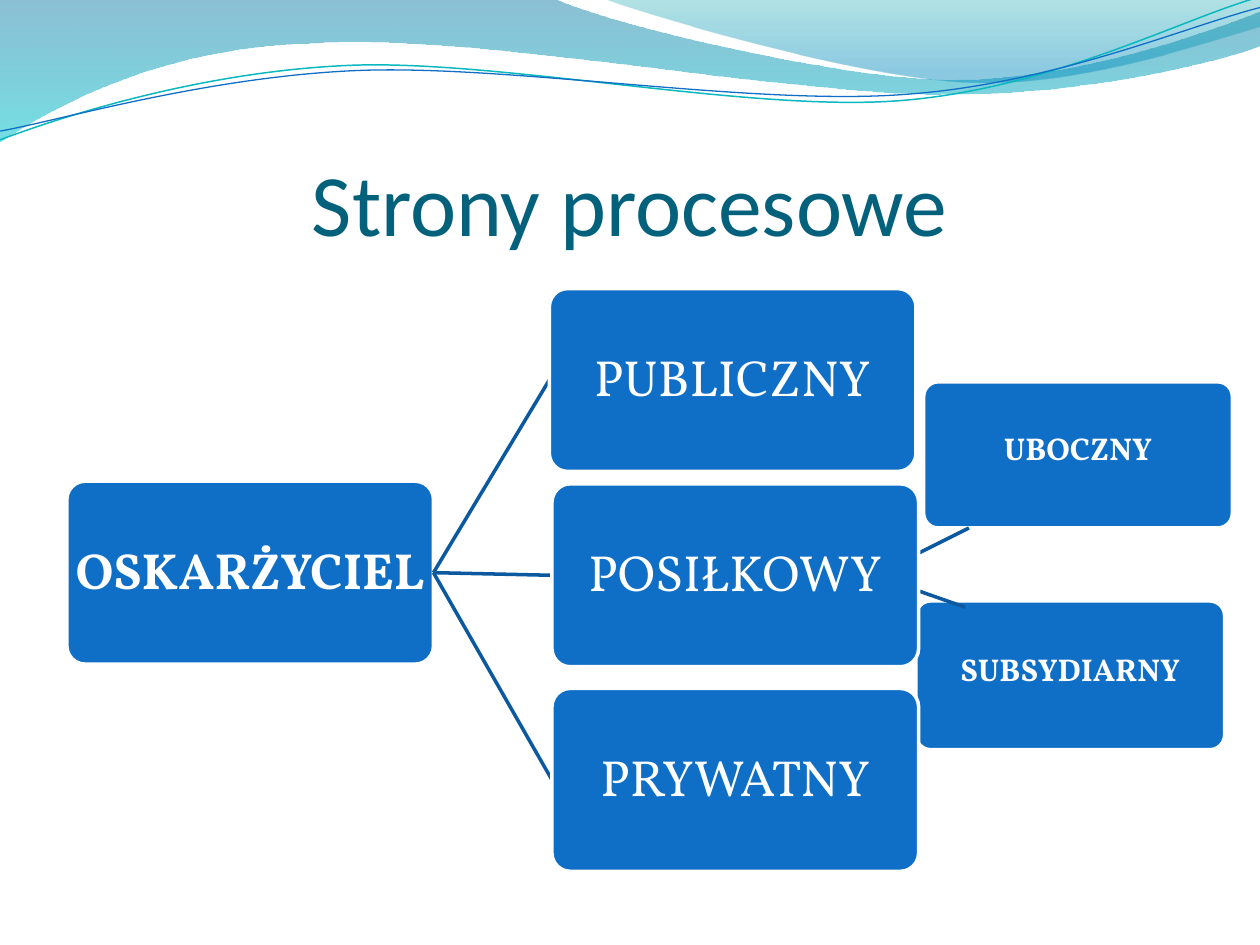
from lxml.etree import SubElement
from pptx import Presentation
from pptx.dml.color import RGBColor
from pptx.enum.shapes import MSO_CONNECTOR as Connector, MSO_SHAPE as Shape
from pptx.enum.text import MSO_ANCHOR as Anchor, PP_ALIGN as Align
from pptx.oxml.ns import qn
from pptx.util import Pt

BLUE, DARK_BLUE, WHITE, TITLE = "0F6FC6", "0C599F", "FFFFFF", "04617B"
HEADING_FONT, BODY_FONT = "Calibri", "Vollkorn"

# Each step is a line end (x, y) or a Bezier curve (two controls and an end).
BROAD_WAVE = [
    (0, 0), (316.8, -0.7),
    (342.7, 12.2, 478.1, 45.4, 545.8, 45.4),
    (614.2, 45.4, 689.8, 18.7, 720, 6.5), (720.7, 25.9),
    (707.8, 31.7, 626.4, 54.7, 537.1, 54),
    (447.8, 54, 275, 20.2, 185, 24.5),
    (92.9, 25.9, 33.1, 59.8, -0.7, 81.4),
]
RIGHT_WAVE = [
    (344.9, -0.7),
    (366.5, 7.9, 491, 44.6, 553.7, 46.8),
    (616.3, 49.7, 691.9, 23, 720, 15.1), (720, 0),
]
TEAL_STRAND = [
    (0, 79.9),
    (34.6, 67, 113.8, 41, 199.4, 37.4),
    (284.4, 33.8, 427, 64.1, 513.4, 57.6),
    (599.8, 51.1, 675.4, 10.8, 718.6, -1.4),
]
BLUE_STRAND = [
    (0, 74.9),
    (33.1, 69.1, 118.1, 43.9, 203.8, 40.3),
    (290.2, 36.7, 429.8, 60.5, 516.2, 54),
    (601.9, 48.2, 677.5, 15.1, 720, 4.3),
]


def color(value):
    return RGBColor.from_string(value)


def add_curve(page, steps, close):
    """Build a freeform from the steps, then turn control points into curves."""
    start, *rest = steps
    builder = page.shapes.build_freeform(Pt(start[0]), Pt(start[1]))
    for step in rest:
        points = [(Pt(x), Pt(y)) for x, y in zip(step[::2], step[1::2])]
        builder.add_line_segments(points, close=False)
    if close:
        builder.add_line_segments([], close=True)
    shape = builder.convert_to_shape()
    shape.shadow.inherit = False

    segments = iter(shape.element.findall(".//" + qn("a:lnTo")))
    for step in rest:
        parts = [next(segments) for _ in step[::2]]
        if len(parts) == 3:
            curve = parts[0]
            curve.tag = qn("a:cubicBezTo")
            for part in parts[1:]:
                curve.append(part[0])
                part.getparent().remove(part)
    return shape


def add_wave(page, steps, stops):
    wave = add_curve(page, steps, close=True)
    wave.line.fill.background()
    wave.fill.gradient()
    wave.fill.gradient_angle = 270
    for stop, (position, tint, opacity) in zip(wave.fill.gradient_stops, stops):
        stop.position = position
        stop.color.rgb = color(tint)
    tints = wave.element.spPr.findall(".//" + qn("a:srgbClr"))
    for tint, (_, _, opacity) in zip(tints, stops):
        SubElement(tint, qn("a:alpha"), val=str(opacity * 1000))


def add_strand(page, steps, tint, width):
    strand = add_curve(page, steps, close=False)
    strand.fill.background()
    strand.line.color.rgb = color(tint)
    strand.line.width = Pt(width)


def add_waves(page):
    add_wave(page, BROAD_WAVE, [(0, "0074A1", 45), (1, "00C6CF", 55)])
    add_wave(page, RIGHT_WAVE, [(0, "00A1A9", 30), (0.8, "008BBF", 45)])
    add_strand(page, TEAL_STRAND, "0AB8BF", 0.85)
    add_strand(page, BLUE_STRAND, BLUE, 0.75)


def write(shape, text, size, font, tint, anchor, insets, bold=False):
    frame = shape.text_frame
    frame.word_wrap = True
    frame.vertical_anchor = anchor
    (frame.margin_left, frame.margin_top,
     frame.margin_right, frame.margin_bottom) = map(Pt, insets)
    para = frame.paragraphs[0]
    para.alignment = Align.CENTER
    span = para.add_run()
    span.text = text
    span.font.size = Pt(size)
    span.font.name = font
    span.font.bold = bold
    span.font.color.rgb = color(tint)
    return para


def add_title(page, box, text):
    title = page.shapes.add_textbox(*map(Pt, box))
    write(title, text, 50, HEADING_FONT, TITLE, Anchor.BOTTOM, (0, 3.6, 0, 0))


def add_node(page, box, text, size, bold, insets):
    node = page.shapes.add_shape(Shape.ROUNDED_RECTANGLE, *map(Pt, box))
    node.shadow.inherit = False
    node.adjustments[0] = 0.1
    node.fill.solid()
    node.fill.fore_color.rgb = color(BLUE)
    node.line.color.rgb = color(WHITE)
    node.line.width = Pt(2)
    para = write(node, text, size, BODY_FONT, WHITE, Anchor.MIDDLE, insets, bold)
    para.line_spacing = 0.9


def add_link(page, start, end):
    link = page.shapes.add_connector(Connector.STRAIGHT, *map(Pt, start + end))
    link.line.color.rgb = color(DARK_BLUE)
    link.line.width = Pt(2)
    SubElement(link.element.spPr, qn("a:effectLst"))


def add_subtypes(page):
    insets = (7.2, 3.6, 7.2, 8.6)
    add_node(page, (527.8, 218.2, 176.4, 83.5), "UBOCZNY", 18, True, insets)
    add_node(page, (523.4, 343.4, 176.4, 85), "SUBSYDIARNY", 18, True, insets)
    add_link(page, (498.2, 328.3), (551.5, 347))
    add_link(page, (503.3, 326.9), (553.7, 301.7))


def add_tree(page, root, children):
    """Draw the root node and link its right edge to each child's left edge."""
    width, height = 209.5, 104.5
    insets = (1.5, 1.5, 1.5, 1.5)
    left, top, text = root
    add_node(page, (left, top, width, height), text, 29, True, insets)
    fork = (left + width, top + height / 2)
    for left, top, text in children:
        add_link(page, fork, (left, top + height / 2))
        add_node(page, (left, top, width, height), text, 29, False, insets)


def main():
    deck = Presentation()
    deck.slide_width, deck.slide_height = Pt(720), Pt(540)
    page = deck.slides.add_slide(deck.slide_layouts[6])
    add_waves(page)
    add_title(page, (36, 55.4, 648, 90), "Strony procesowe")
    add_subtypes(page)
    add_tree(page, (38.2, 275, "OSKARŻYCIEL"), [
        (313.9, 164.9, "PUBLICZNY"),
        (315.4, 276.5, "POSIŁKOWY"),
        (315.4, 393.4, "PRYWATNY"),
    ])
    deck.save("out.pptx")


if __name__ == "__main__":
    main()
